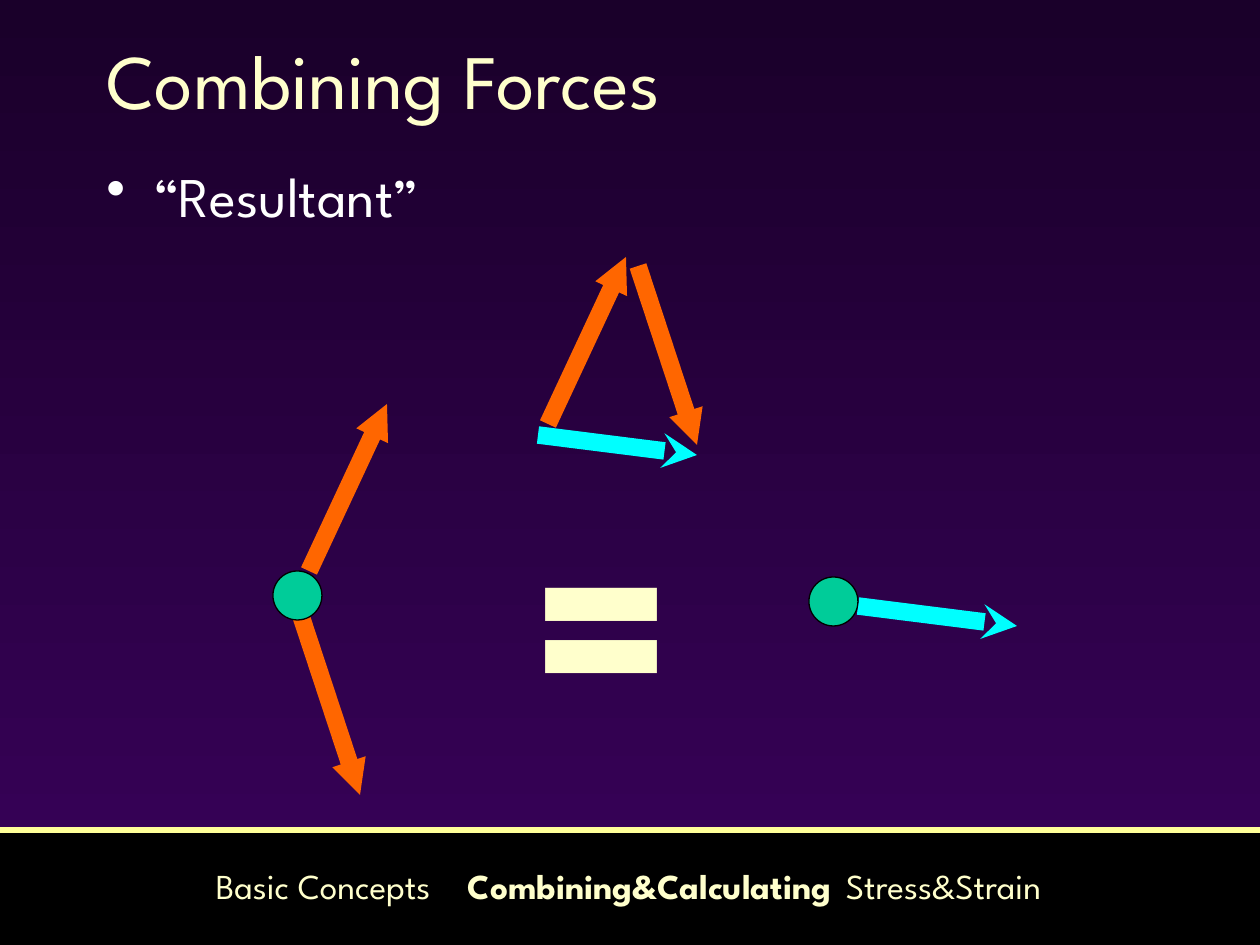
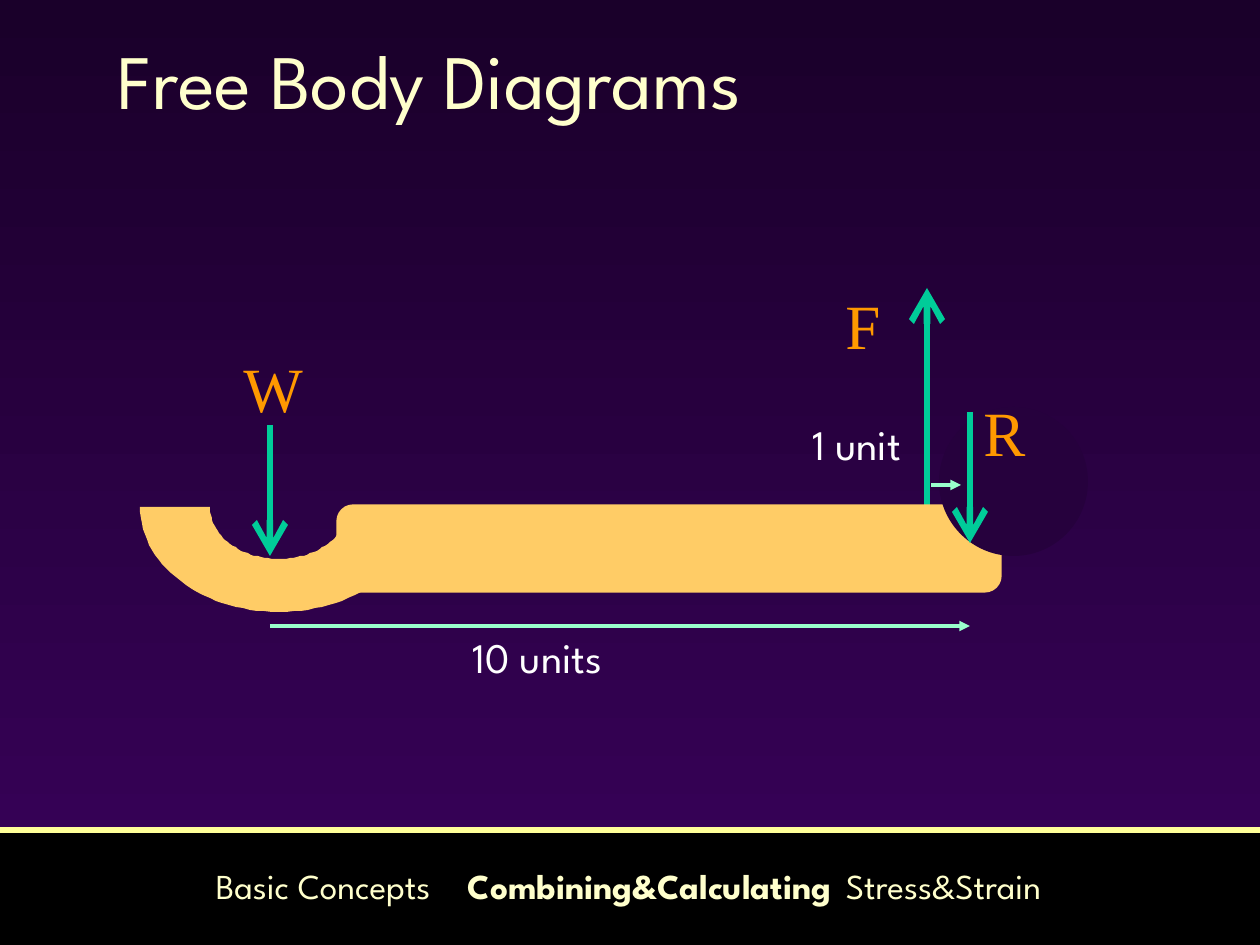
import math

import pptx
import pptx.dml.color
import pptx.enum.dml
import pptx.enum.shapes
import pptx.enum.text
import pptx.util
from lxml import etree
from pptx.oxml.ns import qn

PX = 914400 / 126
SANS = "League Spartan"
SERIF = "Times New Roman"
HUES = {
    "top": "1A002A",
    "base": "39015B",
    "cream": "FFFFCC",
    "white": "FFFFFF",
    "black": "000000",
    "rule": "FFFF99",
    "force": "FF6600",
    "sum": "00FFFF",
    "green": "00CC99",
    "mint": "99FFCC",
    "bone": "FFCC66",
    "joint": "26013D",
    "label": "FF9900",
}
SHAPE = pptx.enum.shapes.MSO_SHAPE
ANCHOR = pptx.enum.text.MSO_ANCHOR
ALIGN = pptx.enum.text.PP_ALIGN


def emu(*nums):
    return [pptx.util.Emu(round(n * PX)) for n in nums]


def hue(name):
    return pptx.dml.color.RGBColor.from_string(HUES[name])


def paint(shape, fill, edge=None, weight=0.75):
    shape.shadow.inherit = False
    shape.fill.solid()
    shape.fill.fore_color.rgb = hue(fill)
    if edge:
        shape.line.color.rgb = hue(edge)
        shape.line.width = pptx.util.Pt(weight)
    else:
        shape.line.fill.background()


def solid(slide, kind, box, fill, edge=None, weight=0.75):
    shape = slide.shapes.add_shape(kind, *emu(*box))
    paint(shape, fill, edge, weight)
    return shape


def line(slide, start, end, color, weight, tip=None, size="med"):
    kind = pptx.enum.shapes.MSO_CONNECTOR.STRAIGHT
    link = slide.shapes.add_connector(kind, *emu(*start, *end))
    link.line.color.rgb = hue(color)
    link.line.width = pptx.util.Pt(weight)
    props = link.element.spPr
    if tip:
        etree.SubElement(props.find(qn("a:ln")), qn("a:tailEnd"),
                         type=tip, w=size, len=size)
    etree.SubElement(props, qn("a:effectLst"))


def arrow(slide, start, move, color, weight, tip, size):
    end = (start[0] + move[0], start[1] + move[1])
    line(slide, start, end, color, weight, tip, size)


def text(slide, box, words, size, color, face=SANS, gap=50,
         bold=None, anchor=ANCHOR.TOP):
    frame = slide.shapes.add_textbox(*emu(*box)).text_frame
    frame.word_wrap = True
    frame.vertical_anchor = anchor
    para = frame.paragraphs[0]
    para.add_run().text = words
    para.font.size = pptx.util.Pt(size)
    para.font.name = face
    para.font.color.rgb = hue(color)
    para.font.bold = bold
    if gap:
        para.space_before = pptx.util.Pt(0)
        space = para._p.pPr.find(qn("a:spcBef"))
        space.remove(space[0])
        etree.SubElement(space, qn("a:spcPct"), val=str(gap * 1000))
    return para


def bullet(slide, box, words):
    para = text(slide, box, words, 32, "white", gap=20)
    props = para._p.pPr
    props.set("marL", "342900")
    props.set("indent", "-342900")
    mark = etree.Element(qn("a:buChar"), char="•")
    props.find(qn("a:spcBef")).addnext(mark)


def footer(slide):
    solid(slide, SHAPE.RECTANGLE, (0, 834, 1260, 110), "black", "black")
    line(slide, (0, 830), (1260, 830), "rule", 3)
    para = text(slide, (66, 858, 1125, 54), "Basic Concepts\t", 20, "cream")
    para.alignment = ALIGN.CENTER
    for words, bold in (("Combining&Calculating", True),
                        ("\tStress&Strain", False)):
        run = para.add_run()
        run.text = words
        run.font.bold = bold


def start(deck, title, left):
    slide = deck.slides.add_slide(deck.slide_layouts[6])
    fill = slide.background.fill
    fill.gradient()
    fill.gradient_angle = 270
    for stop, name, place in zip(fill.gradient_stops, ("top", "base"), (0, 1)):
        stop.color.rgb = hue(name)
        stop.position = place
    text(slide, (left, 0, 1071, 158), title, 44, "cream", gap=0,
         anchor=ANCHOR.MIDDLE)
    footer(slide)
    return slide


def arc(center, wide, high, first, last, steps=60):
    for step in range(steps + 1):
        angle = math.radians(first + (last - first) * step / steps)
        yield (center[0] + wide * math.cos(angle),
               center[1] + high * math.sin(angle))


def hook(slide, center):
    inner = list(arc(center, 69, 52, 180, 0))
    outer = list(arc(center, 139, 105, 0, 180))
    points = inner + outer
    build = slide.shapes.build_freeform(*points[0], scale=PX)
    build.add_line_segments(points[1:], close=True)
    paint(build.convert_to_shape(), "bone")


def ball(slide, left, top):
    solid(slide, SHAPE.OVAL, (left, top, 49, 49), "green", "black")


def forces(deck):
    slide = start(deck, "Combining Forces", 94)
    bullet(slide, (94, 155, 1071, 704), "“Resultant”")
    rise, fall, total = (78, -167), (59, 179), (159, 20)
    for point in ((548, 424), (309, 571)):
        arrow(slide, point, rise, "force", 10, "triangle", "sm")
    for point in ((638, 266), (301, 616)):
        arrow(slide, point, fall, "force", 10, "triangle", "sm")
    for point in ((538, 435), (858, 606)):
        arrow(slide, point, total, "sum", 10, "stealth", "sm")
    ball(slide, 273, 571)
    ball(slide, 809, 577)
    text(slide, (520, 442, 358, 340), "=", 156, "cream", bold=True)


def bodies(deck):
    slide = start(deck, "Free Body Diagrams", 105)
    arrow(slide, (927, 508), (0, -220), "green", 3.75, "arrow", "lg")
    hook(slide, (279, 507))
    beam = solid(slide, SHAPE.ROUNDED_RECTANGLE, (339, 507, 660, 83),
                 "bone", "bone", 3)
    beam.adjustments[0] = 0.17
    solid(slide, SHAPE.OVAL, (939, 407, 149, 149), "joint")
    for point in ((270, 425), (970, 412)):
        arrow(slide, point, (0, 131), "green", 3.75, "arrow", "lg")
    for point, span in (((931, 485), 30), ((270, 626), 700)):
        arrow(slide, point, (span, 0), "mint", 2, "triangle", "med")
    for words, left, top in (("1 unit", 800, 412), ("10 units", 460, 625)):
        text(slide, (left, top, 301, 63), words, 24, "white")
    for words, left, top in (("F", 833, 280), ("R", 971, 387),
                             ("W", 231, 343)):
        text(slide, (left, top, 129, 88), words, 36, "label", SERIF)


def main():
    deck = pptx.Presentation()
    deck.slide_width, deck.slide_height = emu(1260, 945)
    forces(deck)
    bodies(deck)
    deck.save("out.pptx")


if __name__ == "__main__":
    main()
